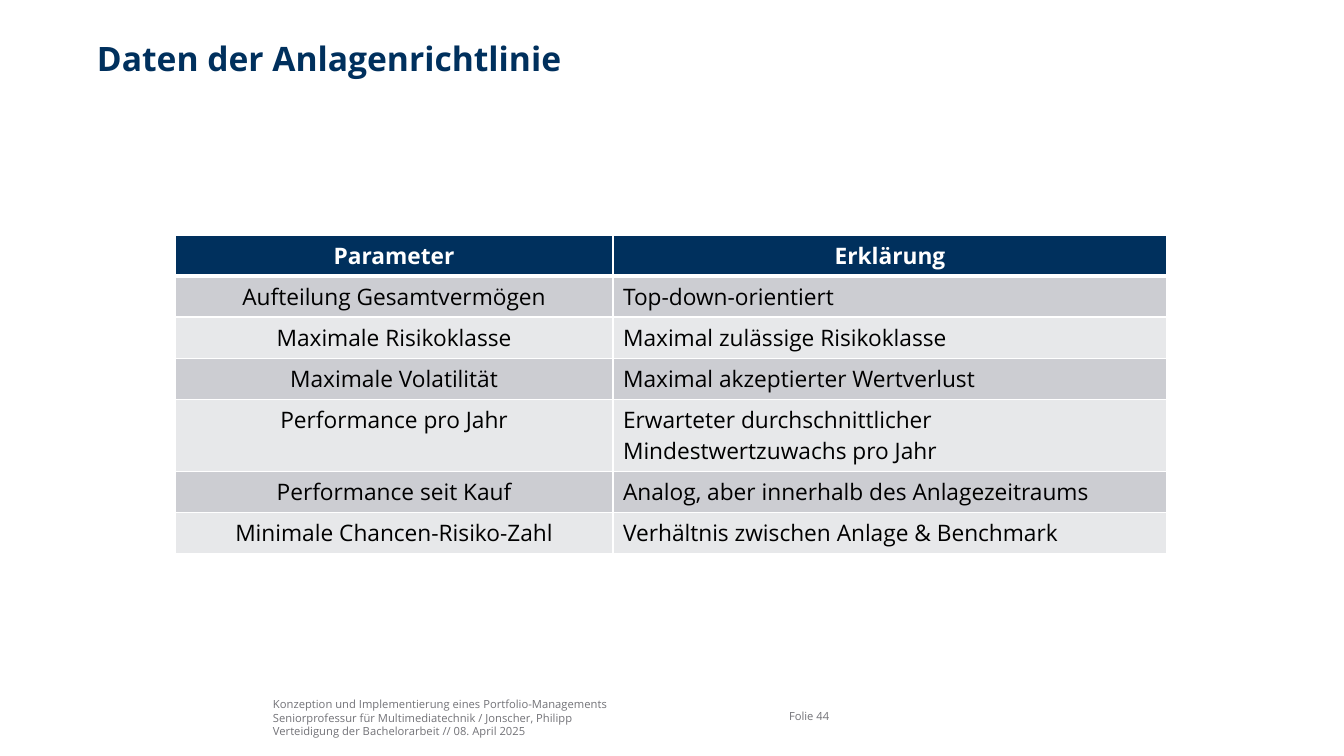
from lxml import etree
from pptx import Presentation
from pptx import util as u
from pptx.dml.color import RGBColor
from pptx.enum import text
from pptx.oxml.ns import qn

PX = 12700 * 72 / 100.8  # EMU in one px
THEME = {
    "font": "Open Sans", "navy": "00305D", "white": "FFFFFF", "black": "000000",
    "grey": "727277", "bands": ("CCCDD2", "E7E8EA"),
    "title": 24, "cell": 16.2, "foot": 8,
}
LEFT, MID = text.PP_ALIGN.LEFT, text.PP_ALIGN.CENTER


def px(*nums):
    return [u.Emu(round(n * PX)) for n in nums]


def write(frame, words, size, color, bold=False, align=LEFT, anchor=None):
    frame.word_wrap = True
    if anchor is not None:
        frame.vertical_anchor = anchor
        frame.margin_left = frame.margin_right = 0
        frame.margin_top = frame.margin_bottom = 0
    frame.text = words
    for par in frame.paragraphs:
        par.alignment = align
        for run in par.runs:
            font = run.font
            font.name, font.size, font.bold = THEME["font"], u.Pt(THEME[size]), bold
            font.color.rgb = RGBColor.from_string(THEME[color])


deck = Presentation()
deck.slide_width, deck.slide_height = px(1344, 756)
slide = deck.slides.add_slide(deck.slide_layouts[5])

# Title
title = slide.shapes.title
title.left, title.top, title.width, title.height = px(97, 38, 1166, 76)
write(title.text_frame, "Daten der Anlagenrichtlinie", "title", "navy",
      bold=True, anchor=text.MSO_ANCHOR.TOP)

# Parameter table
rows = [
    ("Parameter", "Erklärung"),
    ("Aufteilung Gesamtvermögen", "Top-down-orientiert"),
    ("Maximale Risikoklasse", "Maximal zulässige Risikoklasse"),
    ("Maximale Volatilität", "Maximal akzeptierter Wertverlust"),
    ("Performance pro Jahr",
     "Erwarteter durchschnittlicher Mindestwertzuwachs pro Jahr"),
    ("Performance seit Kauf", "Analog, aber innerhalb des Anlagezeitraums"),
    ("Minimale Chancen-Risiko-Zahl", "Verhältnis zwischen Anlage & Benchmark"),
]
table = slide.shapes.add_table(len(rows), 2, *px(175, 235, 992, 41 * len(rows))).table
table.horz_banding = False
for col, wide in zip(table.columns, px(438, 554)):
    col.width = wide

for r, row in enumerate(rows):
    table.rows[r].height = px(41)[0]
    head = r == 0
    for c, words in enumerate(row):
        cell = table.cell(r, c)
        write(cell.text_frame, words, "cell", "white" if head else "black",
              bold=head, align=MID if head or c == 0 else LEFT)
        cell.fill.solid()
        tone = THEME["navy"] if head else THEME["bands"][(r - 1) % 2]
        cell.fill.fore_color.rgb = RGBColor.from_string(tone)
        # White borders, thick around the header's lower edge
        props = cell._tc.get_or_add_tcPr()
        for i, side in enumerate("LRTB"):
            thick = (side == "B" and head) or (side == "T" and r == 1)
            line = etree.Element(qn("a:ln" + side), w=str(u.Pt(3 if thick else 1)))
            fill = etree.SubElement(line, qn("a:solidFill"))
            etree.SubElement(fill, qn("a:srgbClr"), val=THEME["white"])
            props.insert(i, line)

# Footer and page number
foot = ("Konzeption und Implementierung eines Portfolio-Managements\n"
        "Seniorprofessur für Multimediatechnik / Jonscher, Philipp\n"
        "Verteidigung der Bachelorarbeit // 08. April 2025")
for words, spot, anchor in (
    (foot, (273, 697, 494, 41), text.MSO_ANCHOR.BOTTOM),
    ("Folie 44", (789, 696, 78, 40), text.MSO_ANCHOR.MIDDLE),
):
    box = slide.shapes.add_textbox(*px(*spot))
    write(box.text_frame, words, "foot", "grey", anchor=anchor)

deck.save("out.pptx")
